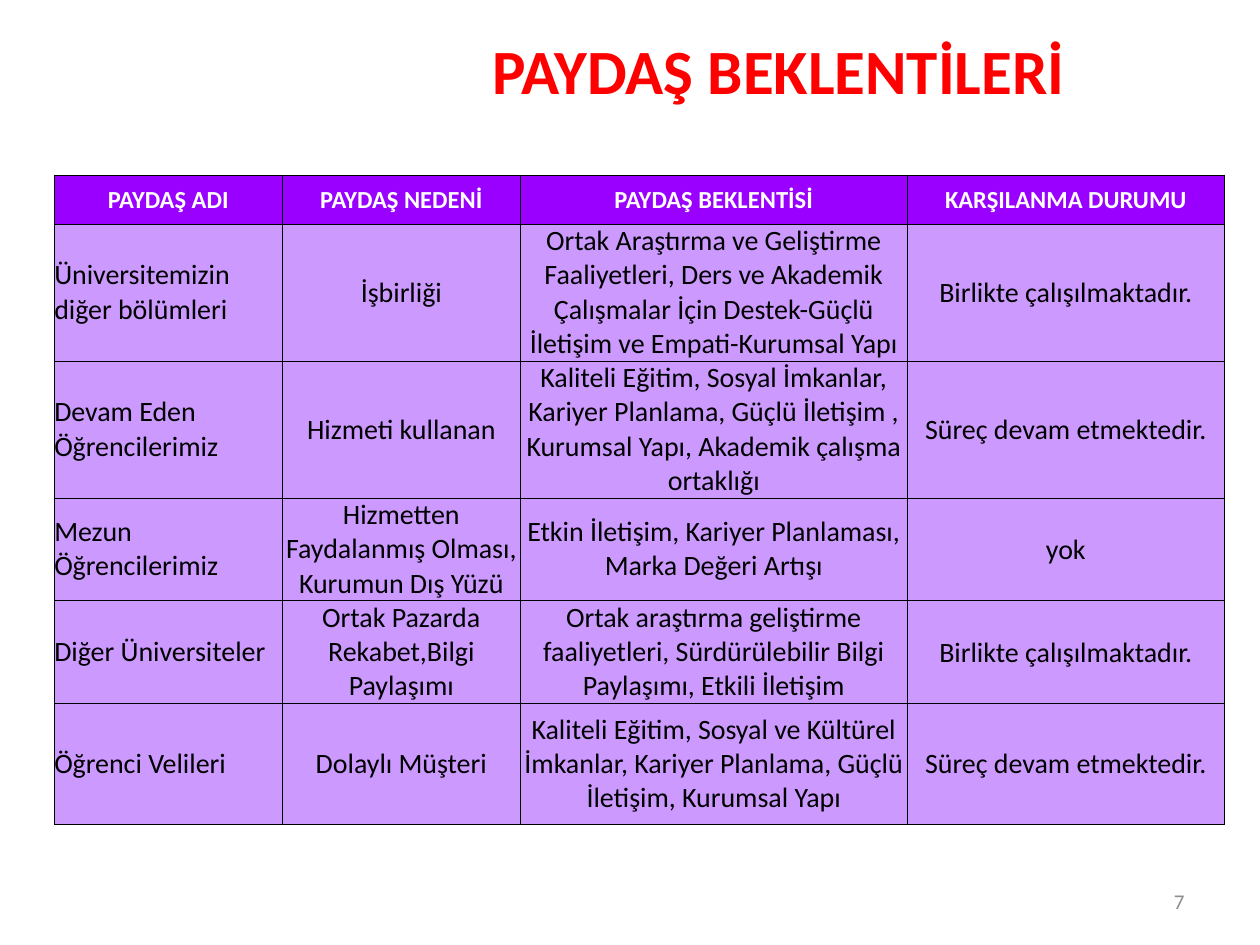
from lxml import etree
from pptx import Presentation
from pptx.dml.color import RGBColor
from pptx.enum.text import MSO_ANCHOR, PP_ALIGN
from pptx.oxml.ns import qn
from pptx.util import Pt

LEFT, CENTER, RIGHT = PP_ALIGN.LEFT, PP_ALIGN.CENTER, PP_ALIGN.RIGHT
TOP, MIDDLE = MSO_ANCHOR.TOP, MSO_ANCHOR.MIDDLE

COLORS = {
    "title": "FF0000",
    "header": "9900FF",
    "header_text": "FFFFFF",
    "body": "CC99FF",
    "body_text": "000000",
    "border": "000000",
    "number": "8C8C8C",
}
FONT = "Calibri"
TITLE = "PAYDAŞ BEKLENTİLERİ"
PAGE = "7"
HEADERS = ["PAYDAŞ ADI", "PAYDAŞ NEDENİ", "PAYDAŞ BEKLENTİSİ", "KARŞILANMA DURUMU"]
STAKEHOLDERS = [
    ("Üniversitemizin diğer bölümleri", "İşbirliği",
     "Ortak Araştırma ve Geliştirme Faaliyetleri, Ders ve Akademik Çalışmalar İçin "
     "Destek-Güçlü İletişim ve Empati-Kurumsal Yapı",
     "Birlikte çalışılmaktadır."),
    ("Devam Eden Öğrencilerimiz", "Hizmeti kullanan",
     "Kaliteli Eğitim, Sosyal İmkanlar, Kariyer Planlama, Güçlü İletişim , "
     "Kurumsal Yapı, Akademik çalışma ortaklığı",
     "Süreç devam etmektedir."),
    ("Mezun Öğrencilerimiz", "Hizmetten Faydalanmış Olması, Kurumun Dış Yüzü",
     "Etkin İletişim, Kariyer Planlaması, Marka Değeri Artışı",
     "yok"),
    ("Diğer Üniversiteler", "Ortak Pazarda Rekabet,Bilgi Paylaşımı",
     "Ortak araştırma geliştirme faaliyetleri, Sürdürülebilir Bilgi Paylaşımı, "
     "Etkili İletişim",
     "Birlikte çalışılmaktadır."),
    ("Öğrenci Velileri", "Dolaylı Müşteri",
     "Kaliteli Eğitim, Sosyal ve Kültürel İmkanlar, Kariyer Planlama, "
     "Güçlü İletişim, Kurumsal Yapı",
     "Süreç devam etmektedir."),
]
COL_WIDTHS = [130.3, 136.1, 221, 181.4]
ROW_HEIGHTS = [28, 72, 72, 46, 53.3, 69]
TABLE_LEFT, TABLE_TOP = 31, 100


def write(tf, text, size, color, bold=False, align=CENTER, anchor=MIDDLE):
    tf.word_wrap = True
    tf.vertical_anchor = anchor
    p = tf.paragraphs[0]
    p.alignment = align
    r = p.add_run()
    r.text = text
    r.font.name = FONT
    r.font.size = Pt(size)
    r.font.bold = bold
    r.font.color.rgb = RGBColor.from_string(COLORS[color])


def style_cell(cell, fill, inset):
    cell.margin_left = cell.margin_right = cell.margin_top = Pt(inset)
    cell.margin_bottom = 0
    tc_pr = cell._tc.get_or_add_tcPr()
    for side in ("lnL", "lnR", "lnT", "lnB"):
        ln = etree.SubElement(tc_pr, qn(f"a:{side}"), w=str(Pt(0.5)))
        solid = etree.SubElement(ln, qn("a:solidFill"))
        etree.SubElement(solid, qn("a:srgbClr"), val=COLORS["border"])
    cell.fill.solid()
    cell.fill.fore_color.rgb = RGBColor.from_string(COLORS[fill])


def add_stakeholder_table(s):
    rows = [HEADERS, *STAKEHOLDERS]
    table = s.shapes.add_table(
        len(rows), len(HEADERS), Pt(TABLE_LEFT), Pt(TABLE_TOP),
        Pt(sum(COL_WIDTHS)), Pt(sum(ROW_HEIGHTS))).table
    for column, width in zip(table.columns, COL_WIDTHS):
        column.width = Pt(width)
    for i, (row, height) in enumerate(zip(rows, ROW_HEIGHTS)):
        table.rows[i].height = Pt(height)
        header = i == 0
        kind = "header" if header else "body"
        for j, text in enumerate(row):
            cell = table.cell(i, j)
            last = j == len(row) - 1
            style_cell(cell, kind, 0.7 if header or last else 0)
            write(cell.text_frame, text, 14 if header else 16, f"{kind}_text",
                  bold=header, align=LEFT if j == 0 and not header else CENTER)
            cell.vertical_anchor = MIDDLE


prs = Presentation()
prs.slide_width, prs.slide_height = Pt(720), Pt(540)
s = prs.slides.add_slide(prs.slide_layouts[5])

title = s.shapes.title
title.left, title.top, title.width, title.height = Pt(170), Pt(14.4), Pt(550), Pt(51)
write(title.text_frame, TITLE, 36, "title", bold=True, anchor=TOP)

add_stakeholder_table(s)

number = s.shapes.add_textbox(Pt(516), Pt(500.4), Pt(168), Pt(28.8))
write(number.text_frame, PAGE, 12, "number", align=RIGHT)

prs.save("out.pptx")
